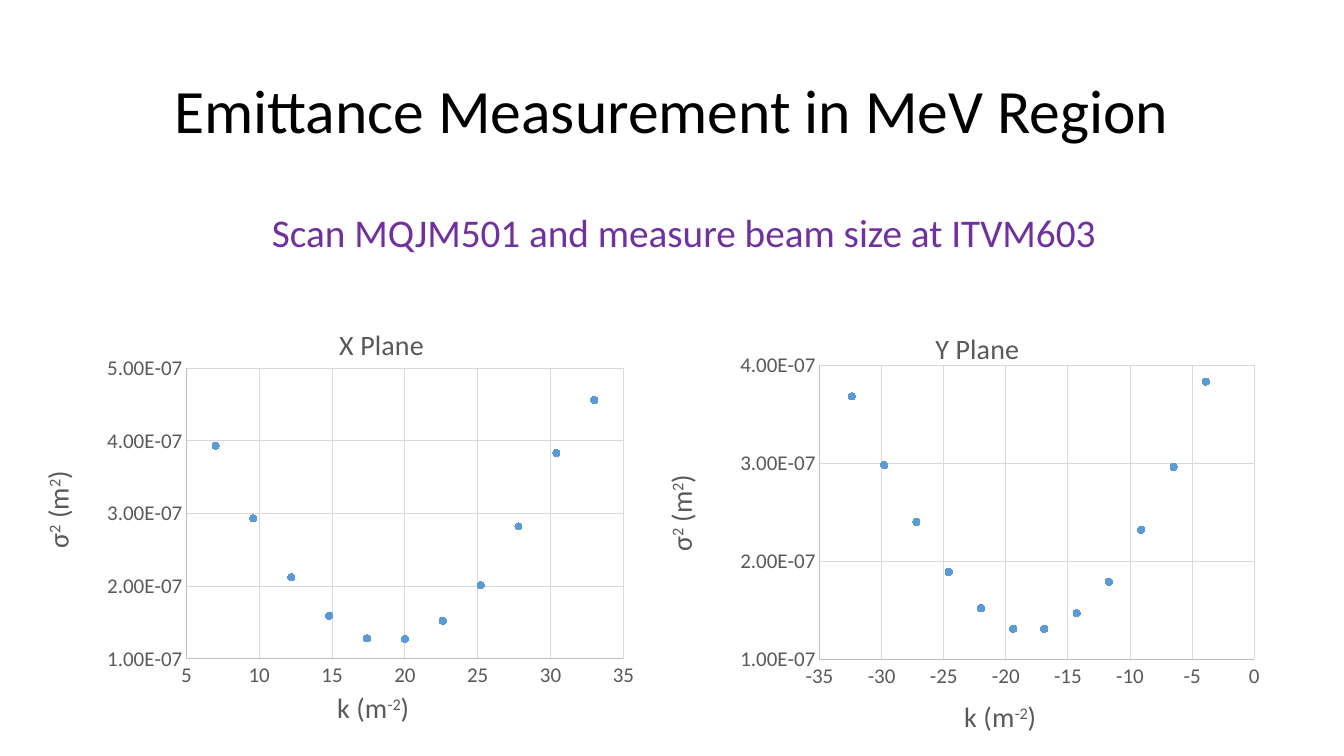
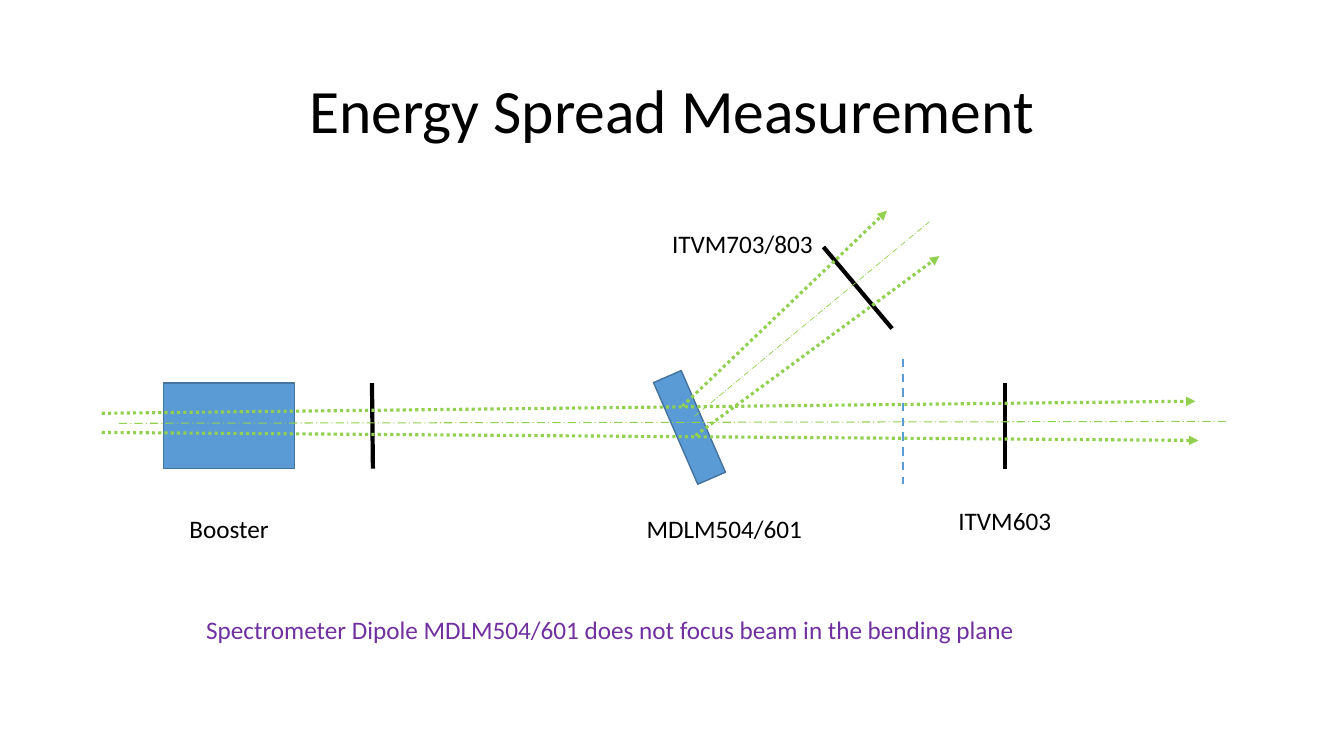
from lxml import etree
from pptx import Presentation
from pptx import util as u
from pptx.chart.data import XyChartData
from pptx.dml.color import RGBColor
from pptx.enum import chart as charts, dml, shapes, text
from pptx.oxml.ns import qn

FONT = "Calibri"
BLACK = RGBColor(0x00, 0x00, 0x00)
PURPLE = RGBColor(0x70, 0x30, 0xA0)
BLUE = RGBColor(0x5B, 0x9B, 0xD5)
DARK_BLUE = RGBColor(0x43, 0x73, 0x9E)
GREEN = RGBColor(0x92, 0xD0, 0x50)
GREY_TEXT = RGBColor(0x59, 0x59, 0x59)
GREY_AXIS = RGBColor(0xBF, 0xBF, 0xBF)
GREY_GRID = RGBColor(0xD9, 0xD9, 0xD9)

DASH = dml.MSO_LINE.DASH
DOTS = dml.MSO_LINE.ROUND_DOT
DASH_DOT = dml.MSO_LINE.LONG_DASH_DOT


def write(frame, content, size=18, color=BLACK, align=None, spacing=None):
    """Write one paragraph; parts between carets are superscript."""
    paragraph = frame.paragraphs[0]
    paragraph.alignment = align
    paragraph.line_spacing = spacing
    for index, part in enumerate(content.split("^")):
        run = paragraph.add_run()
        run.text = part
        style_font(run.font, size, color)
        if index % 2:
            run._r.get_or_add_rPr().set("baseline", "30000")


def style_font(font, size, color):
    font.name = FONT
    font.size = u.Pt(size)
    font.bold = False
    font.color.rgb = color


def style_line(line, color, width):
    line.color.rgb = color
    line.width = u.Pt(width)


def set_layout(element, index, **fractions):
    """Fix a chart part's place, in fractions of the chart's size."""
    for old in element.findall(qn("c:layout")):
        element.remove(old)
    layout = etree.Element(qn("c:layout"))
    manual = etree.SubElement(layout, qn("c:manualLayout"))
    if "w" in fractions:
        etree.SubElement(manual, qn("c:layoutTarget")).set("val", "inner")
    for name in ("xMode", "yMode"):
        etree.SubElement(manual, qn("c:" + name)).set("val", "edge")
    for name in "xywh":
        if name in fractions:
            etree.SubElement(manual, qn("c:" + name)).set("val", str(fractions[name]))
    element.insert(index, layout)


def write_chart_title(title, content, position):
    write(title.text_frame, content, size=20, color=GREY_TEXT)
    set_layout(title.element, 1, x=position[0], y=position[1])


def style_axis(axis, low, high, step, number_format):
    axis.minimum_scale, axis.maximum_scale, axis.major_unit = low, high, step
    axis.crosses = charts.XL_AXIS_CROSSES.MINIMUM
    axis.major_tick_mark = axis.minor_tick_mark = charts.XL_TICK_MARK.NONE
    axis.has_major_gridlines = True
    style_line(axis.major_gridlines.format.line, GREY_GRID, 0.75)
    style_line(axis.format.line, GREY_AXIS, 0.75)
    labels = axis.tick_labels
    labels.number_format = number_format
    labels.number_format_is_linked = False
    style_font(labels.font, 15, GREY_TEXT)


class Deck:
    def __init__(self):
        self.presentation = Presentation()
        self.presentation.slide_width = u.Pt(960)
        self.presentation.slide_height = u.Pt(540)
        self.slide = None

    def add_slide(self, title):
        self.slide = self.presentation.slides.add_slide(self.presentation.slide_layouts[5])
        shape = self.slide.shapes.title
        shape.left, shape.top, shape.width, shape.height = map(u.Pt, (66, 28.8, 828, 104.4))
        shape.text_frame.vertical_anchor = text.MSO_ANCHOR.MIDDLE
        write(shape.text_frame, title, size=44, align=text.PP_ALIGN.CENTER, spacing=0.9)

    def add_label(self, content, left, top, width, height=28.8, **style):
        box = self.slide.shapes.add_textbox(*map(u.Pt, (left, top, width, height)))
        box.text_frame.word_wrap = False
        box.text_frame.auto_size = text.MSO_AUTO_SIZE.SHAPE_TO_FIT_TEXT
        write(box.text_frame, content, **style)

    def add_block(self, left, top, width, height, rotation=0):
        shape = self.slide.shapes.add_shape(
            shapes.MSO_SHAPE.RECTANGLE, *map(u.Pt, (left, top, width, height)))
        shape.rotation = rotation
        shape.shadow.inherit = False
        shape.fill.solid()
        shape.fill.fore_color.rgb = BLUE
        style_line(shape.line, DARK_BLUE, 1)

    def add_line(self, *ends, color=BLACK, width=3, dash=None, arrow=False):
        connector = self.slide.shapes.add_connector(
            shapes.MSO_CONNECTOR.STRAIGHT, *map(u.Pt, ends))
        style_line(connector.line, color, width)
        if dash:
            connector.line.dash_style = dash
        properties = connector.element.spPr
        if arrow:
            line = properties.find(qn("a:ln"))
            etree.SubElement(line, qn("a:tailEnd")).set("type", "triangle")
        etree.SubElement(properties, qn("a:effectLst"))

    def add_scatter(self, title, place, points, x_range, y_range, plot, title_places):
        data = XyChartData()
        series_data = data.add_series("Series 1")
        for x, y in points:
            series_data.add_data_point(x, y)
        chart = self.slide.shapes.add_chart(
            charts.XL_CHART_TYPE.XY_SCATTER, *map(u.Pt, place), data).chart
        chart.has_legend = False
        style_font(chart.font, 10, BLACK)
        chart.plots[0].vary_by_categories = False
        x_axis, y_axis = chart.category_axis, chart.value_axis
        style_axis(x_axis, *x_range, 5, "General")
        style_axis(y_axis, *y_range, 1e-7, "0.00E+00")
        chart.has_title = True
        titles = (chart.chart_title, x_axis.axis_title, y_axis.axis_title)
        for part, content, position in zip(
                titles, (title, "k (m^-2^)", "σ^2^ (m^2^)"), title_places):
            write_chart_title(part, content, position)
        body = y_axis.axis_title.element.find(".//" + qn("a:bodyPr"))
        body.set("rot", "-5400000")
        body.set("vert", "horz")
        set_layout(chart.element.find(".//" + qn("c:plotArea")), 0, **dict(zip("xywh", plot)))
        series = chart.plots[0].series[0]
        series.format.line.fill.background()
        marker = series.marker
        marker.style = charts.XL_MARKER_STYLE.CIRCLE
        marker.size = 5
        marker.format.fill.solid()
        marker.format.fill.fore_color.rgb = BLUE
        style_line(marker.format.line, BLUE, 0.75)


X_PLANE = [(7, 3.93e-7), (9.6, 2.93e-7), (12.2, 2.12e-7), (14.8, 1.59e-7),
           (17.4, 1.28e-7), (20, 1.27e-7), (22.6, 1.52e-7), (25.2, 2.01e-7),
           (27.8, 2.82e-7), (30.4, 3.83e-7), (33, 4.56e-7)]
Y_PLANE = [(-32.4, 3.68e-7), (-29.8, 2.98e-7), (-27.2, 2.4e-7), (-24.6, 1.89e-7),
           (-22, 1.52e-7), (-19.4, 1.31e-7), (-16.9, 1.31e-7), (-14.3, 1.47e-7),
           (-11.7, 1.79e-7), (-9.1, 2.32e-7), (-6.5, 2.96e-7), (-3.9, 3.83e-7)]


def build_emittance(deck):
    deck.add_slide("Emittance Measurement in MeV Region")
    deck.add_scatter("X Plane", (25.9, 228.2, 434.2, 294.5), X_PLANE,
                     (5, None), (1e-7, None), (0.247, 0.118, 0.719, 0.705),
                     [(0.49, 0), (0.49, 0.89), (0, 0.36)])
    deck.add_scatter("Y Plane", (466.6, 228.2, 439.9, 301.7), Y_PLANE,
                     (-35, 0), (1e-7, None), (0.27, 0.108, 0.706, 0.697),
                     [(0.45, 0.01), (0.5, 0.89), (0.01, 0.36)])
    deck.add_label("Scan MQJM501 and measure beam size at ITVM603",
                   187.2, 145.4, 609.8, 41, size=28, color=PURPLE)


def build_energy_spread(deck):
    deck.add_slide("Energy Spread Measurement")
    deck.add_block(117, 273.6, 93.6, 61.2)
    for screen in [(265.7, 273.6, 266.4, 334.8), (717.8, 273.6, 717.8, 334.8),
                   (588.2, 176.4, 637.2, 234.7)]:
        deck.add_line(*screen)
    deck.add_block(481.7, 265.7, 21.6, 79.2, rotation=336.5)
    deck.add_line(85, 302.4, 875.5, 301, color=GREEN, width=0.75, dash=DASH_DOT)
    for beam_edge in [(72.7, 295.2, 853.9, 286.6), (72.7, 308.9, 856.1, 314.6),
                      (487.4, 290.2, 633.6, 150.5), (496.8, 311, 671, 182.9)]:
        deck.add_line(*beam_edge, color=GREEN, width=2.25, dash=DOTS, arrow=True)
    deck.add_line(496.1, 297.4, 663.8, 158.4, color=GREEN, width=0.5, dash=DASH_DOT)
    for label in [("Booster", 128.2, 362.9, 72), ("ITVM703/803", 473, 159.8, 115.9),
                  ("ITVM603", 677.5, 357.5, 81.4), ("MDLM504/601", 454.8, 362.9, 126.7)]:
        deck.add_label(*label)
    deck.add_label("Spectrometer Dipole MDLM504/601 does not focus beam in the bending plane",
                   140.2, 435.6, 599, color=PURPLE)
    deck.add_line(645.1, 256.3, 645.1, 345.6, color=BLUE, width=1.5, dash=DASH)


def main():
    deck = Deck()
    build_emittance(deck)
    build_energy_spread(deck)
    deck.presentation.save("out.pptx")


if __name__ == "__main__":
    main()
